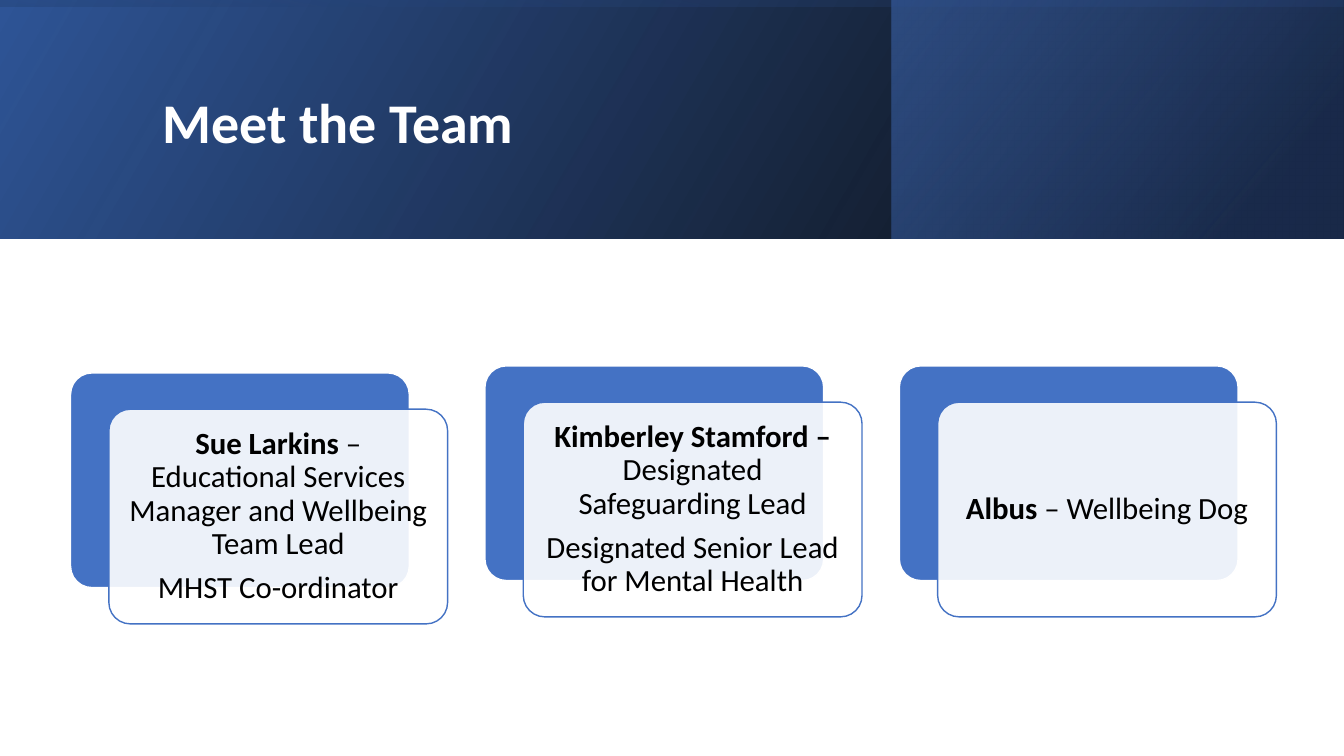
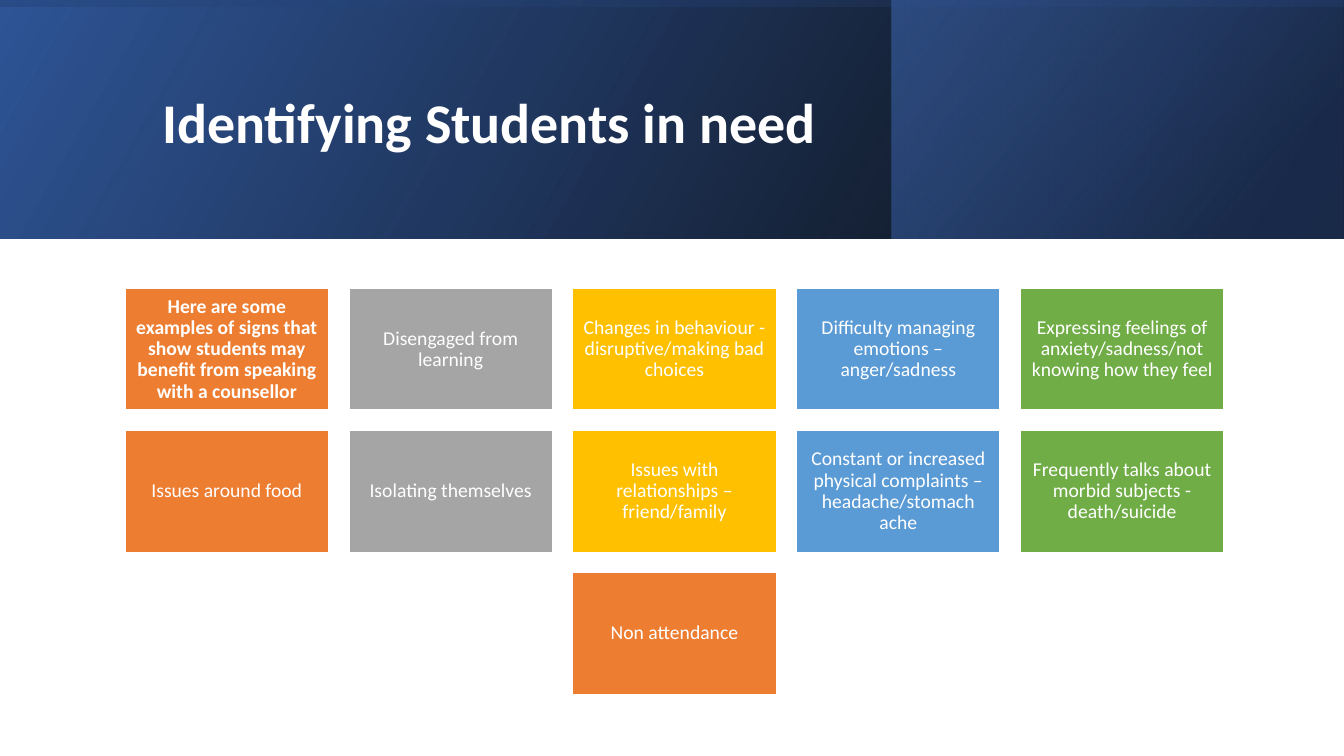
"""Build two slides: the wellbeing team and the signs of students in need."""
from itertools import count

from lxml import etree
from pptx import Presentation
from pptx import util as u
from pptx.dml.color import RGBColor
from pptx.enum import shapes, text
from pptx.oxml.ns import qn

FONT = "Calibri"
COLORS = {
    "white": "FFFFFF", "black": "000000", "blue": "4472C4",
    "deep_blue": "2F5597", "navy": "203864", "orange": "ED7D31",
    "gray": "A5A5A5", "gold": "FFC000", "sky": "5B9BD5", "green": "70AD47",
}

# Each stop is (position, color, opacity), positions and opacities in percent.
BANDS = [
    {"box": (0, 0, 13.33, 2.37), "rotation": 0, "angle": 30,
     "stops": [(0, "black", 96), (100, "deep_blue", 100)]},
    {"box": (8.84, 0, 4.48, 2.37), "rotation": 0, "angle": 40,
     "stops": [(19, "navy", 68), (100, "blue", 48)]},
    {"box": (5.48, -5.48, 2.37, 13.33), "rotation": 270, "angle": 10,
     "stops": [(23, "deep_blue", 16), (99, "black", 45)]},
]
TITLE_BOX = (1.51, 0.38, 10.63, 1.72)

TEAM_TITLE = "Meet the Team"
TEAM = [
    (3.7, [[("Sue Larkins ", True),
            ("– Educational Services Manager and Wellbeing Team Lead", False)],
           [("MHST Co-ordinator", False)]]),
    (3.63, [[("Kimberley Stamford – ", True),
             ("Designated Safeguarding Lead", False)],
            [("Designated Senior Lead for Mental Health", False)]]),
    (3.63, [[("Albus", True), (" – Wellbeing Dog", False)]]),
]
CARD_LEFT, CARD_PITCH = 0.7, 4.11
CARD_SIZE = (3.36, 2.13)
CARD_SHIFT = (0.38, 0.36)

SIGNS_TITLE = "Identifying Students in need"
SIGNS_INTRO = ("Here are some examples of signs that show students may "
               "benefit from speaking with a counsellor")
SIGN_ROWS = [
    [SIGNS_INTRO, "Disengaged from learning",
     "Changes in behaviour - disruptive/making bad choices",
     "Difficulty managing emotions – anger/sadness",
     "Expressing feelings of anxiety/sadness/not knowing how they feel"],
    ["Issues around food", "Isolating themselves",
     "Issues with relationships – friend/family",
     "Constant or increased physical complaints – headache/stomach ache",
     "Frequently talks about morbid subjects - death/suicide"],
    ["Non attendance"],
]
SIGN_COLORS = ["orange", "gray", "gold", "sky", "green"]
SIGN_LEFT, SIGN_TOP, SIGN_GAP = 1.24, 2.86, 0.2
SIGN_SIZE = (2.02, 1.21)


def rgb(name):
    """Return the named color."""
    return RGBColor.from_string(COLORS[name])


def set_opacity(shape, percents):
    """Give the fill colors of a shape their opacities, in order."""
    for color, percent in zip(shape.element.spPr.iter(qn("a:srgbClr")), percents):
        if percent < 100:
            etree.SubElement(color, qn("a:alpha")).set("val", str(percent * 1000))


def add_box(slide, kind, box, fill=None, line=None):
    """Add a preset shape without shadow."""
    shape = slide.shapes.add_shape(kind, *map(u.Inches, box))
    shape.shadow.inherit = False
    if fill:
        shape.fill.solid()
        shape.fill.fore_color.rgb = rgb(fill)
    if line:
        shape.line.color.rgb = rgb(line)
        shape.line.width = u.Pt(1)
    else:
        shape.line.fill.background()
    return shape


def add_run(paragraph, words, size, color, bold):
    """Add one formatted run."""
    run = paragraph.add_run()
    run.text = words
    run.font.name = FONT
    run.font.size = u.Pt(size)
    run.font.bold = bold
    run.font.color.rgb = rgb(color)


def write_centered(shape, paragraphs, size, color, margin):
    """Fill a shape with centered paragraphs of (words, bold) runs."""
    frame = shape.text_frame
    frame.word_wrap = True
    frame.vertical_anchor = text.MSO_ANCHOR.MIDDLE
    frame.margin_left = frame.margin_right = u.Inches(margin)
    frame.margin_top = frame.margin_bottom = u.Inches(margin)
    for index, runs in enumerate(paragraphs):
        paragraph = frame.add_paragraph() if index else frame.paragraphs[0]
        paragraph.alignment = text.PP_ALIGN.CENTER
        paragraph.line_spacing = 0.9
        paragraph.space_after = u.Pt(size * 0.35)
        for words, bold in runs:
            add_run(paragraph, words, size, color, bold)


def add_titled_slide(presentation, title_words):
    """Add a slide with the gradient header and its title."""
    slide = presentation.slides.add_slide(presentation.slide_layouts[5])
    for band in BANDS:
        shape = add_box(slide, shapes.MSO_SHAPE.RECTANGLE, band["box"])
        shape.rotation = band["rotation"]
        shape.element.spPr.get_or_add_xfrm().set("flipH", "1")
        shape.fill.gradient()
        shape.fill.gradient_angle = band["angle"]
        for stop, (position, color, _) in zip(shape.fill.gradient_stops, band["stops"]):
            stop.position = position / 100
            stop.color.rgb = rgb(color)
        set_opacity(shape, [opacity for _, _, opacity in band["stops"]])
    title = slide.shapes.title
    title.element.getparent().append(title.element)
    title.left, title.top, title.width, title.height = map(u.Inches, TITLE_BOX)
    frame = title.text_frame
    frame.auto_size = text.MSO_AUTO_SIZE.NONE
    frame.vertical_anchor = text.MSO_ANCHOR.MIDDLE
    paragraph = frame.paragraphs[0]
    paragraph.alignment = text.PP_ALIGN.LEFT
    paragraph.line_spacing = 0.9
    add_run(paragraph, title_words, 40, "white", True)
    return slide


def add_team(slide):
    """Add one double card for each team member."""
    for index, (top, paragraphs) in enumerate(TEAM):
        left = CARD_LEFT + index * CARD_PITCH
        shift_x, shift_y = CARD_SHIFT
        kind = shapes.MSO_SHAPE.ROUNDED_RECTANGLE
        back = add_box(slide, kind, (left, top, *CARD_SIZE), "blue", "white")
        front = add_box(slide, kind, (left + shift_x, top + shift_y, *CARD_SIZE),
                        "white", "blue")
        for card in (back, front):
            card.adjustments[0] = 0.1
        set_opacity(front, [90])
        write_centered(front, paragraphs, 22, "black", 0.09)


def add_signs(slide):
    """Add the grid of signs, centering a short row."""
    width, height = SIGN_SIZE
    number = count()
    for row, signs in enumerate(SIGN_ROWS):
        indent = (len(SIGN_ROWS[0]) - len(signs)) / 2
        for column, sign in enumerate(signs):
            left = SIGN_LEFT + (indent + column) * (width + SIGN_GAP)
            top = SIGN_TOP + row * (height + SIGN_GAP)
            color = SIGN_COLORS[next(number) % len(SIGN_COLORS)]
            tile = add_box(slide, shapes.MSO_SHAPE.RECTANGLE,
                           (left, top, width, height), color, "white")
            write_centered(tile, [[(sign, sign == SIGNS_INTRO)]], 14, "white", 0.06)


def main():
    """Build and save the presentation."""
    presentation = Presentation()
    presentation.slide_width = u.Inches(13.33)
    presentation.slide_height = u.Inches(7.5)
    add_team(add_titled_slide(presentation, TEAM_TITLE))
    add_signs(add_titled_slide(presentation, SIGNS_TITLE))
    presentation.save("out.pptx")


if __name__ == "__main__":
    main()
